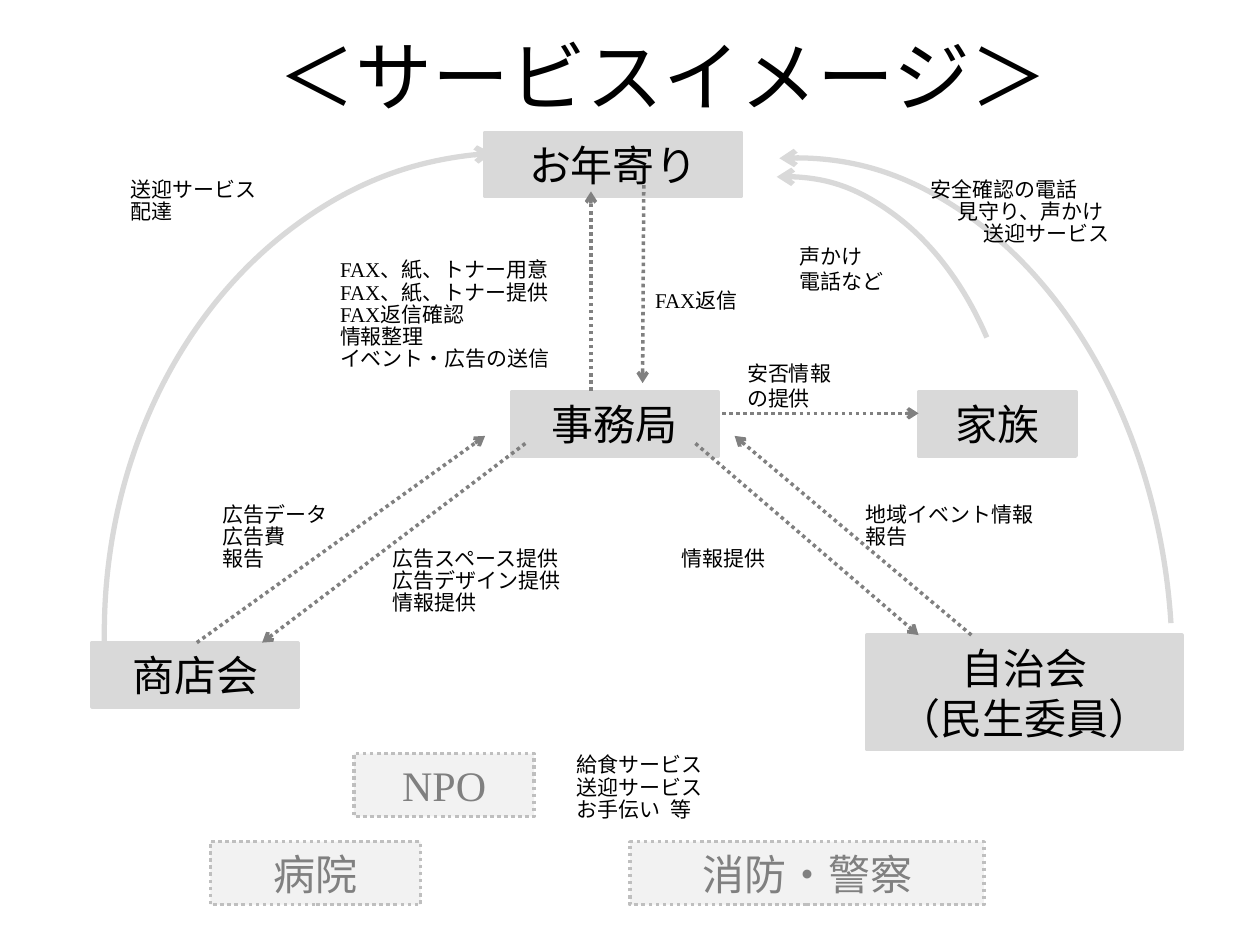
"""Build the service overview slide."""
from pptx import Presentation
from pptx.dml.color import RGBColor
from pptx.enum.dml import MSO_LINE
from pptx.enum.shapes import MSO_CONNECTOR, MSO_SHAPE
from pptx.enum.text import MSO_ANCHOR, MSO_AUTO_SIZE, PP_ALIGN
from pptx.oxml.ns import qn
from pptx.util import Pt
from lxml import etree

RECT, ARC = MSO_SHAPE.RECTANGLE, MSO_SHAPE.ARC
STRAIGHT = MSO_CONNECTOR.STRAIGHT
DOT = MSO_LINE.ROUND_DOT
LEFT, CENTER = PP_ALIGN.LEFT, PP_ALIGN.CENTER
COLORS = {"ink": "000000", "core": "D9D9D9", "flow": "808080",
          "pale": "F2F2F2", "edge": "BFBFBF"}
FRAME = {"word_wrap": True, "auto_size": MSO_AUTO_SIZE.SHAPE_TO_FIT_TEXT}
FONT = {"name": "Times New Roman", "bold": False}
STEP = 12.65

CORE = [
    ("お年寄り", 277.2, 75.6, 146.2, 36.7),
    ("事務局", 292.3, 223.9, 118.1, 36.7),
    ("自治会\n（民生委員）", 495.4, 362.9, 180, 65.5),
    ("商店会", 52.6, 367.2, 118.1, 36.7),
    ("家族", 524.9, 223.9, 90, 36.7),
]
HELP = [
    ("消防・警察", 360, 481, 202.3, 36),
    ("病院", 120.2, 481, 120.2, 36),
    ("NPO", 202.3, 430.6, 103, 36),
]
FLOWS = [
    (337.7, 223.2, 337.7, 109.4),
    (367.9, 105.8, 367.2, 218.9),
    (112.5, 367.2, 277.2, 249.1),
    (300.2, 253.4, 149.8, 367.2),
    (397.4, 253.4, 524.9, 362.9),
    (555.1, 362.9, 419.8, 249.1),
    (412.6, 236.2, 524.9, 236.2),
]
ARCS = [
    (325.4, 100.8, 257, 357.8, 356.8, 194.96, False),
    (253.4, 90, 416.2, 560.2, 356.7, 215.66, False),
    (59.8, 87.1, 475.2, 560.2, 356.7, 214.37, True),
]
NOTES = [
    (187.2, 143.3, 215, 0, ["FAX、紙、トナー用意", "FAX、紙、トナー提供", "FAX返信確認",
                            "情報整理", "イベント・広告の送信"]),
    (367.2, 160.6, 90, 0, ["FAX返信"]),
    (217.4, 308.2, 220, 0, ["広告スペース提供", "広告デザイン提供", "情報提供"]),
    (120.2, 283, 202.3, 0, ["広告データ", "広告費", "報告"]),
    (382.3, 308.2, 105.1, 0, ["情報提供"]),
    (487.4, 283, 230, 0, ["地域イベント情報", "報告"]),
    (419.8, 202.3, 97.2, 0, ["安否情報\nの提供"]),
    (524.9, 97.2, 165, 15.1, ["安全確認の電話", "見守り、声かけ", "送迎サービス"]),
    (450, 135.4, 105.1, 0, ["声かけ\n電話など"]),
    (67.7, 97.2, 149.8, 0, ["送迎サービス", "配達"]),
    (322.6, 426.2, 135.4, 0, ["給食サービス", "送迎サービス", "お手伝い  等"]),
]


def tone(name):
    """Return a named colour."""
    return RGBColor.from_string(COLORS[name])


def apply(item, values):
    """Set each format value on an item."""
    for key, value in values.items():
        setattr(item, key, value)


def write(shape, text, size, color, align):
    """Write one paragraph per line of text."""
    frame = shape.text_frame
    frame.text = text
    apply(frame, FRAME)
    for para in frame.paragraphs:
        para.alignment = align
        apply(para.font, {**FONT, "size": Pt(size)})
        para.font.color.rgb = tone(color)


def stroke(shape, color, width, dash=None, end=None):
    """Style a line and give it an arrowhead at the named end."""
    line = shape.line
    line.color.rgb = tone(color)
    apply(line, {"width": Pt(width), "dash_style": dash})
    if end:
        edge = shape._element.spPr.find(qn("a:ln"))
        etree.SubElement(edge, qn(f"a:{end}")).set("type", "arrow")


def add_box(shapes, text, x, y, w, h, fill, edge, ink, dash=None):
    """Add a labelled rectangle."""
    box = shapes.add_shape(RECT, Pt(x), Pt(y), Pt(w), Pt(h))
    box.shadow.inherit = False
    box.fill.solid()
    box.fill.fore_color.rgb = tone(fill)
    stroke(box, edge, 2, dash)
    write(box, text, 24, ink, CENTER)
    box.text_frame.vertical_anchor = MSO_ANCHOR.MIDDLE


def add_text(shapes, text, x, y, w, h, size, align=LEFT):
    """Add a plain text box."""
    box = shapes.add_textbox(Pt(x), Pt(y), Pt(w), Pt(h))
    write(box, text, size, "ink", align)


def add_note(shapes, x, y, w, shift, lines):
    """Add evenly stepped lines, grouped when there are several."""
    host = shapes.add_group_shape().shapes if len(lines) > 1 else shapes
    for i, text in enumerate(lines):
        high = 36.7 if "\n" in text else 21.6
        add_text(host, text, x + i * shift, y + i * STEP, w, high, 12)


def add_flow(shapes, x1, y1, x2, y2):
    """Add a dotted arrow."""
    flow = shapes.add_connector(STRAIGHT, Pt(x1), Pt(y1), Pt(x2), Pt(y2))
    stroke(flow, "flow", 2, DOT, "tailEnd")
    etree.SubElement(flow._element.spPr, qn("a:effectLst"))


def add_arc(shapes, x, y, w, h, turn, stop, flip):
    """Add a curved arrow that starts at the top of its ellipse."""
    arc = shapes.add_shape(ARC, Pt(x), Pt(y), Pt(w), Pt(h))
    arc.shadow.inherit = False
    arc.fill.background()
    arc.adjustments[0], arc.adjustments[1] = 162, stop
    arc.rotation = turn
    if flip:
        arc._element.spPr.find(qn("a:xfrm")).set("flipH", "1")
    stroke(arc, "core", 3, end="headEnd")


def main():
    """Build and save the slide."""
    deck = Presentation()
    apply(deck, {"slide_width": Pt(720), "slide_height": Pt(540)})
    shapes = deck.slides.add_slide(deck.slide_layouts[6]).shapes
    add_text(shapes, "＜サービスイメージ＞", 82.8, 13, 592.6, 60.5, 44, CENTER)
    for arc in ARCS:
        add_arc(shapes, *arc)
    for box in CORE:
        add_box(shapes, *box, "core", "core", "ink")
    for flow in FLOWS:
        add_flow(shapes, *flow)
    for box in HELP:
        add_box(shapes, *box, "pale", "edge", "flow", DOT)
    for note in NOTES:
        add_note(shapes, *note)
    deck.save("out.pptx")


if __name__ == "__main__":
    main()
